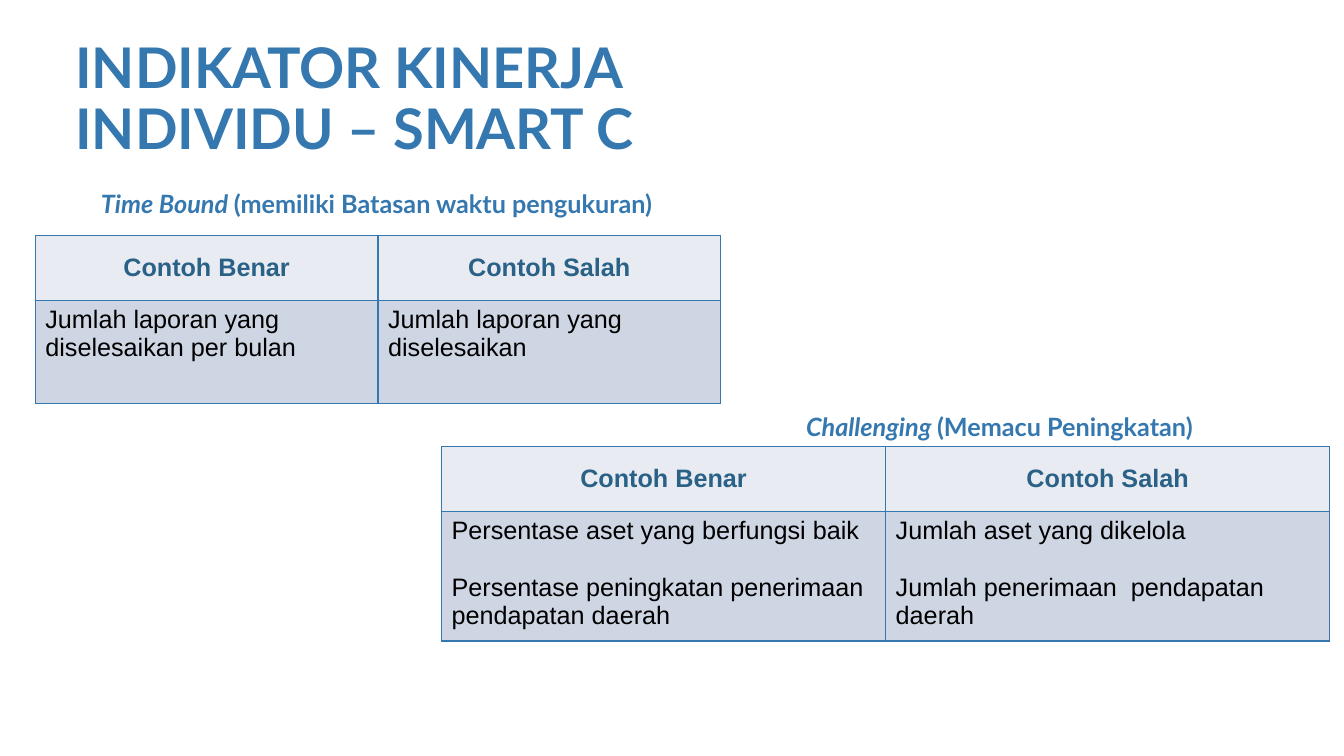
from dataclasses import dataclass

from lxml import etree
from pptx import Presentation
from pptx.dml.color import RGBColor
from pptx.enum.text import MSO_ANCHOR, PP_ALIGN
from pptx.oxml.ns import qn
from pptx.util import Pt

CENTER, LEFT = PP_ALIGN.CENTER, PP_ALIGN.LEFT
TOP, MIDDLE = MSO_ANCHOR.TOP, MSO_ANCHOR.MIDDLE


@dataclass(frozen=True)
class Theme:
    """Colours, fonts and type sizes of the slide."""
    blue: str = "3578AF"
    head_text: str = "2A6187"
    body_text: str = "000000"
    head_fill: str = "E8ECF2"
    body_fill: str = "CED6E3"
    heading_font: str = "Lato"
    table_font: str = "Arial"
    title_size: float = 40
    text_size: float = 18
    border: float = 1
    head_height: float = 46.1
    caption_height: float = 52.6
    paragraph_gap: float = 20.7


THEME = Theme()
HEADINGS = ("Contoh Benar", "Contoh Salah")


def style(p, font, size, color, bold, align):
    """Set the font and alignment of a paragraph."""
    p.alignment = align
    p.font.name, p.font.size, p.font.bold = font, Pt(size), bold
    p.font.color.rgb = RGBColor.from_string(color)


def add_text(s, box, runs, size, align, anchor):
    """Add a heading made of (text, italic) runs and return its paragraph."""
    tf = s.shapes.add_textbox(*map(Pt, box)).text_frame
    tf.word_wrap, tf.vertical_anchor = True, anchor
    p = tf.paragraphs[0]
    style(p, THEME.heading_font, size, THEME.blue, True, align)
    for text, italic in runs:
        r = p.add_run()
        r.text, r.font.italic = text, italic
    return p


def add_title(s, box, text):
    """Place the slide title in its box."""
    p = add_text(s, box, [(text, False)], THEME.title_size, LEFT, MIDDLE)
    p.line_spacing = 0.9


def add_borders(cell):
    """Draw a thin line on every side of a cell."""
    tc_pr = cell._tc.get_or_add_tcPr()
    for side in ("lnL", "lnR", "lnT", "lnB"):
        ln = etree.SubElement(tc_pr, qn(f"a:{side}"), w=str(Pt(THEME.border)))
        fill = etree.SubElement(ln, qn("a:solidFill"))
        etree.SubElement(fill, qn("a:srgbClr"), val=THEME.blue)


def fill_cell(cell, lines, is_head):
    """Write paragraphs into a heading or body cell and colour it."""
    add_borders(cell)
    cell.fill.solid()
    fill = THEME.head_fill if is_head else THEME.body_fill
    cell.fill.fore_color.rgb = RGBColor.from_string(fill)
    cell.vertical_anchor = MIDDLE if is_head else TOP
    color = THEME.head_text if is_head else THEME.body_text
    tf = cell.text_frame
    for i, line in enumerate(lines):
        p = tf.add_paragraph() if i else tf.paragraphs[0]
        p.text = line
        style(p, THEME.table_font, THEME.text_size, color, is_head,
              CENTER if is_head else LEFT)
        if i:
            p.space_before = Pt(THEME.paragraph_gap)


def add_examples(s, box, caption_box, term, meaning, examples):
    """Place an example table in its box, with a caption offset from it."""
    x, y, w, h = box
    dx, dy, caption_w = caption_box
    add_text(s, (x + dx, y + dy, caption_w, THEME.caption_height),
             [(f"{term} ", True), (meaning, False)],
             THEME.text_size, CENTER, TOP)
    table = s.shapes.add_table(2, len(HEADINGS), *map(Pt, box)).table
    for col in table.columns:
        col.width = Pt(w / len(HEADINGS))
    table.rows[0].height = Pt(THEME.head_height)
    table.rows[1].height = Pt(h - THEME.head_height)
    for i, (heading, lines) in enumerate(zip(HEADINGS, examples)):
        fill_cell(table.cell(0, i), [heading], True)
        fill_cell(table.cell(1, i), lines, False)


def main():
    """Build the slide and save it."""
    prs = Presentation()
    prs.slide_width, prs.slide_height = Pt(960), Pt(540)
    s = prs.slides.add_slide(prs.slide_layouts[6])
    add_title(s, (46.8, 25.2, 419.8, 93.6),
              "INDIKATOR KINERJA INDIVIDU – SMART C")
    add_examples(s, (25.2, 168.5, 489.6, 119.5), (10.1, -37.5, 467.3),
                 "Time Bound", "(memiliki Batasan waktu pengukuran)",
                 [["Jumlah laporan yang diselesaikan per bulan"],
                  ["Jumlah laporan yang diselesaikan"]])
    add_examples(s, (315.4, 319, 634.4, 134.7), (188.6, -28.8, 419.8),
                 "Challenging", "(Memacu Peningkatan)",
                 [["Persentase aset yang berfungsi baik",
                   "Persentase peningkatan penerimaan pendapatan daerah"],
                  ["Jumlah aset yang dikelola",
                   "Jumlah penerimaan  pendapatan daerah"]])
    prs.save("out.pptx")


if __name__ == "__main__":
    main()
